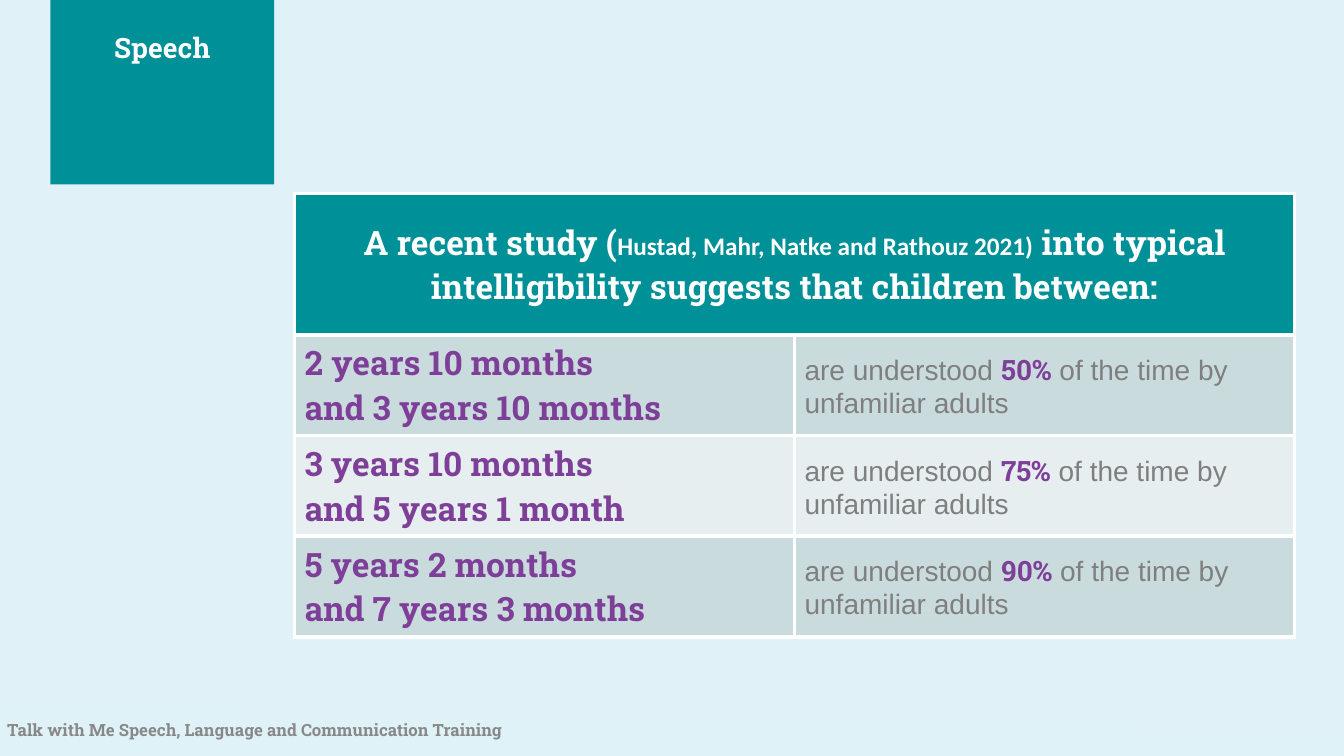
from lxml.etree import SubElement
from pptx import Presentation
from pptx.dml.color import RGBColor
from pptx.enum.shapes import MSO_SHAPE
from pptx.enum.text import MSO_ANCHOR, MSO_AUTO_SIZE, PP_ALIGN
from pptx.oxml.ns import qn
from pptx.util import Inches, Pt

TEAL, PURPLE, GREY, WHITE = "009098", "7E3F99", "7F7F7F", "FFFFFF"
BANDS = ["CADBDD", "E6EEEF"]
SLAB, BODY, CITATION = "Roboto Slab", "Arial", "Calibri"


def rgb(value):
    return RGBColor.from_string(value)


class SlideBuilder:
    def __init__(self, prs, background):
        self.slide = prs.slides.add_slide(prs.slide_layouts[5])
        self.shapes = self.slide.shapes
        fill = self.slide.background.fill
        fill.solid()
        fill.fore_color.rgb = rgb(background)

    def paint(self, sp, color):
        sp.shadow.inherit = False
        sp.fill.solid()
        sp.fill.fore_color.rgb = rgb(color)
        sp.line.fill.background()

    def rectangle(self, box, color):
        sp = self.shapes.add_shape(MSO_SHAPE.RECTANGLE, *map(Inches, box))
        self.paint(sp, color)

    def polygon(self, points, color):
        points = [(Inches(x), Inches(y)) for x, y in points]
        builder = self.shapes.build_freeform(*points[0], scale=1.0)
        builder.add_line_segments(points[1:], close=True)
        self.paint(builder.convert_to_shape(), color)

    def add_runs(self, p, runs, align=PP_ALIGN.LEFT):
        """Fill a paragraph with (text, size, font, color, bold) runs."""
        p.alignment = align
        for text, size, font, color, bold in runs:
            r = p.add_run()
            r.text = text
            r.font.size, r.font.name, r.font.bold = Pt(size), font, bold
            r.font.color.rgb = rgb(color)

    def frame(self, sp, box, runs, align=PP_ALIGN.LEFT):
        """Place a text-holding shape without margins and set its line."""
        sp.left, sp.top, sp.width, sp.height = map(Inches, box)
        tf = sp.text_frame
        tf.word_wrap = True
        tf.auto_size = MSO_AUTO_SIZE.NONE
        tf.vertical_anchor = MSO_ANCHOR.TOP
        tf.margin_left = tf.margin_right = tf.margin_top = tf.margin_bottom = 0
        self.add_runs(tf.paragraphs[0], runs, align)

    def title(self, box, runs):
        title = self.shapes.title
        self.frame(title, box, runs, PP_ALIGN.CENTER)
        self.shapes._spTree.append(title._element)  # bring to front

    def text(self, box, runs):
        self.frame(self.shapes.add_textbox(0, 0, 0, 0), box, runs)

    def table(self, box, row_heights, columns):
        shape = self.shapes.add_table(len(row_heights), columns, *map(Inches, box))
        for row, height in zip(shape.table.rows, row_heights):
            row.height = Inches(height)
        return shape.table

    def cell(self, cell, color, paragraphs=(), align=PP_ALIGN.LEFT):
        tcPr = cell._tc.get_or_add_tcPr()
        for side in ("lnL", "lnR", "lnT", "lnB"):
            ln = SubElement(tcPr, qn(f"a:{side}"), w=str(Pt(3)))
            solid = SubElement(ln, qn("a:solidFill"))
            SubElement(solid, qn("a:srgbClr"), val=WHITE)
        cell.fill.solid()
        cell.fill.fore_color.rgb = rgb(color)
        cell.vertical_anchor = MSO_ANCHOR.MIDDLE
        tf = cell.text_frame
        for i, runs in enumerate(paragraphs):
            p = tf.add_paragraph() if i else tf.paragraphs[0]
            self.add_runs(p, runs, align)


def main():
    prs = Presentation()
    prs.slide_width, prs.slide_height = Inches(13.33), Inches(7.5)
    s = SlideBuilder(prs, "E0F2F8")

    s.polygon([(0, 7), (0, 7.5), (13.33, 7.5), (13.33, 7.24)], "DFF2F7")
    s.rectangle((0.5, 0, 2.22, 1.83), TEAL)
    s.title((0.5, 0.3, 2.22, 1.53), [("Speech", 20, SLAB, WHITE, True)])

    findings = [
        ("2 years 10 months", "and 3 years 10 months", "50%"),
        ("3 years 10 months", "and 5 years 1 month", "75%"),
        ("5 years 2 months", "and 7 years 3 months", "90%"),
    ]
    table = s.table((2.92, 1.92, 9.92, 4.4), [1.4] + [1] * len(findings), 2)
    heading = [
        ("A recent study (", 24, SLAB, WHITE, True),
        ("Hustad, Mahr, Natke and Rathouz 2021)", 18, CITATION, WHITE, True),
        (" into typical intelligibility suggests that children between:",
         24, SLAB, WHITE, True),
    ]
    table.cell(0, 0).merge(table.cell(0, 1))
    s.cell(table.cell(0, 0), TEAL, [heading], PP_ALIGN.CENTER)
    s.cell(table.cell(0, 1), TEAL)

    for row, (*ages, share) in enumerate(findings, 1):
        band = BANDS[(row - 1) % 2]
        s.cell(table.cell(row, 0), band,
               [[(age, 24, SLAB, PURPLE, True)] for age in ages])
        s.cell(table.cell(row, 1), band, [[
            ("are understood ", 20, BODY, GREY, False),
            (share, 20, SLAB, PURPLE, True),
            (" of the time by unfamiliar adults", 20, BODY, GREY, False),
        ]])

    s.text((0.07, 7.14, 8.55, 0.2),
           [("Talk with Me Speech, Language and Communication Training",
             12, SLAB, "888888", True)])
    prs.save("out.pptx")


if __name__ == "__main__":
    main()
